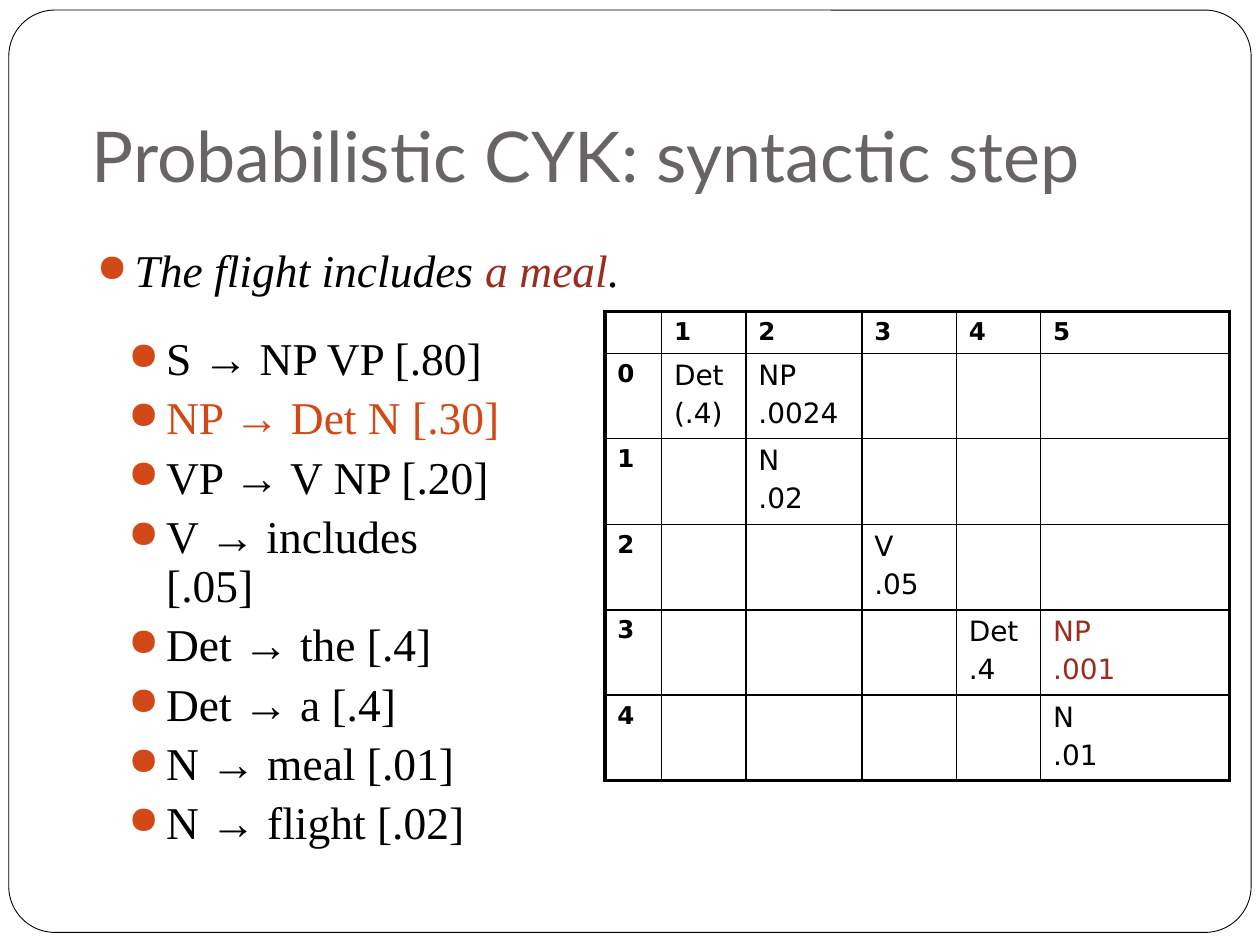
from lxml.etree import SubElement
from pptx import Presentation
from pptx.dml.color import RGBColor
from pptx.enum.shapes import MSO_SHAPE
from pptx.enum.text import MSO_ANCHOR
from pptx.oxml.ns import qn
from pptx.util import Inches, Pt

BLACK, WHITE, GREY = "000000", "FFFFFF", "696464"
ORANGE, RED = "D34817", "9B2D1F"
SERIF, SANS, TITLE_FONT = "Times New Roman", "DejaVu Sans", "Lato"

TITLE = "Probabilistic CYK: syntactic step"
SENTENCE = [("The flight includes ", BLACK), ("a meal", RED), (".", BLACK)]
RULES = [
    ("S → NP VP [.80]", BLACK),
    ("NP → Det N [.30]", ORANGE),
    ("VP → V NP [.20]", BLACK),
    ("V → includes [.05]", BLACK),
    ("Det → the [.4]", BLACK),
    ("Det → a [.4]", BLACK),
    ("N → meal [.01]", BLACK),
    ("N → flight [.02]", BLACK),
]

# (row, column): lines of the chart cell
CHART = {
    (1, 1): ("Det", "(.4)"),
    (1, 2): ("NP", ".0024"),
    (2, 2): ("N", ".02"),
    (3, 3): ("V", ".05"),
    (4, 4): ("Det", ".4"),
    (4, 5): ("NP", ".001"),
    (5, 5): ("N", ".01"),
}
CHART.update({(0, number): (str(number),) for number in range(1, 6)})
CHART.update({(number + 1, 0): (str(number),) for number in range(5)})
NEW_CELL = (4, 5)
COLUMN_WIDTHS = [0.45, 0.67, 0.92, 0.75, 0.67, 1.5]
ROW_HEIGHTS = [0.33, 0.66, 0.68, 0.66, 0.66, 0.66]


def color(value):
    return RGBColor.from_string(value)


def add_run(para, text, size, font, value, bold=False, italic=False):
    span = para.add_run()
    span.text = text
    span.font.size = Pt(size)
    span.font.name = font
    span.font.color.rgb = color(value)
    span.font.bold = bold
    span.font.italic = italic


def add_text_frame(page, left, top, width, height):
    box = page.shapes.add_textbox(*map(Inches, (left, top, width, height)))
    box.text_frame.word_wrap = True
    return box.text_frame


def make_bullet(para):
    para.line_spacing = 0.9
    para.space_before = Pt(5.8)
    props = para._p.get_or_add_pPr()
    props.set("marL", str(Inches(0.3)))
    props.set("indent", str(-Inches(0.3)))
    SubElement(SubElement(props, qn("a:buClr")), qn("a:srgbClr"), val=ORANGE)
    SubElement(props, qn("a:buSzPct"), val="85000")
    SubElement(props, qn("a:buChar"), char="●")


def add_bullets(frame, items, italic=False):
    """Write one bullet per item; an item is a list of (text, colour) runs."""
    for index, spans in enumerate(items):
        para = frame.add_paragraph() if index else frame.paragraphs[0]
        make_bullet(para)
        for text, value in spans:
            add_run(para, text, 26, SERIF, value, italic=italic)


def set_borders(cell, row, column):
    """Draw thin inner lines and a thick line around the table."""
    outer = {
        "a:lnL": column == 0,
        "a:lnR": column == len(COLUMN_WIDTHS) - 1,
        "a:lnT": row == 0,
        "a:lnB": row == len(ROW_HEIGHTS) - 1,
    }
    props = cell._tc.get_or_add_tcPr()
    for tag, is_outer in outer.items():
        line = SubElement(props, qn(tag), w=str(Pt(2.25 if is_outer else 1)))
        fill = SubElement(line, qn("a:solidFill"))
        SubElement(fill, qn("a:srgbClr"), val=BLACK)


def fill_cell(cell, row, column):
    heading = row == 0 or column == 0
    size = 14 if heading else 16
    value = RED if (row, column) == NEW_CELL else BLACK
    frame = cell.text_frame
    lines = CHART.get((row, column), ())
    for index, text in enumerate(lines):
        para = frame.add_paragraph() if index else frame.paragraphs[0]
        if index:
            para.space_before = Pt(0.2 * size)
        add_run(para, text, size, SANS, value, bold=heading)
    if not lines:
        SubElement(frame.paragraphs[0]._p, qn("a:endParaRPr"), sz=str(size * 100))


def add_chart_table(page, left, top):
    table = page.shapes.add_table(
        len(ROW_HEIGHTS), len(COLUMN_WIDTHS), Inches(left), Inches(top),
        Inches(sum(COLUMN_WIDTHS)), Inches(sum(ROW_HEIGHTS))).table
    table.first_row = table.horz_banding = False
    for column, width in enumerate(COLUMN_WIDTHS):
        table.columns[column].width = Inches(width)
    for row, height in enumerate(ROW_HEIGHTS):
        table.rows[row].height = Inches(height)
        for column in range(len(COLUMN_WIDTHS)):
            cell = table.cell(row, column)
            set_borders(cell, row, column)
            cell.fill.background()
            fill_cell(cell, row, column)


def add_frame(page):
    frame = page.shapes.add_shape(
        MSO_SHAPE.ROUNDED_RECTANGLE, *map(Inches, (0.07, 0.08, 9.86, 7.32)))
    frame.adjustments[0] = 0.05
    frame.shadow.inherit = False
    frame.fill.solid()
    frame.fill.fore_color.rgb = color(WHITE)
    frame.line.color.rgb = color(BLACK)
    frame.line.width = Pt(0.5)


def main():
    deck = Presentation()
    deck.slide_width, deck.slide_height = Inches(10), Inches(7.5)
    page = deck.slides.add_slide(deck.slide_layouts[6])
    add_frame(page)

    title = add_text_frame(page, 0.63, 0.33, 8.75, 1.33)
    title.vertical_anchor = MSO_ANCHOR.BOTTOM
    title.margin_bottom = Inches(0.1)
    add_run(title.paragraphs[0], TITLE, 40, TITLE_FONT, GREY)

    add_bullets(add_text_frame(page, 0.67, 1.92, 8.75, 0.5), [SENTENCE], italic=True)
    add_chart_table(page, 4.8, 2.47)
    add_bullets(add_text_frame(page, 0.92, 2.62, 3.25, 4.55), [[rule] for rule in RULES])
    deck.save("out.pptx")


if __name__ == "__main__":
    main()
